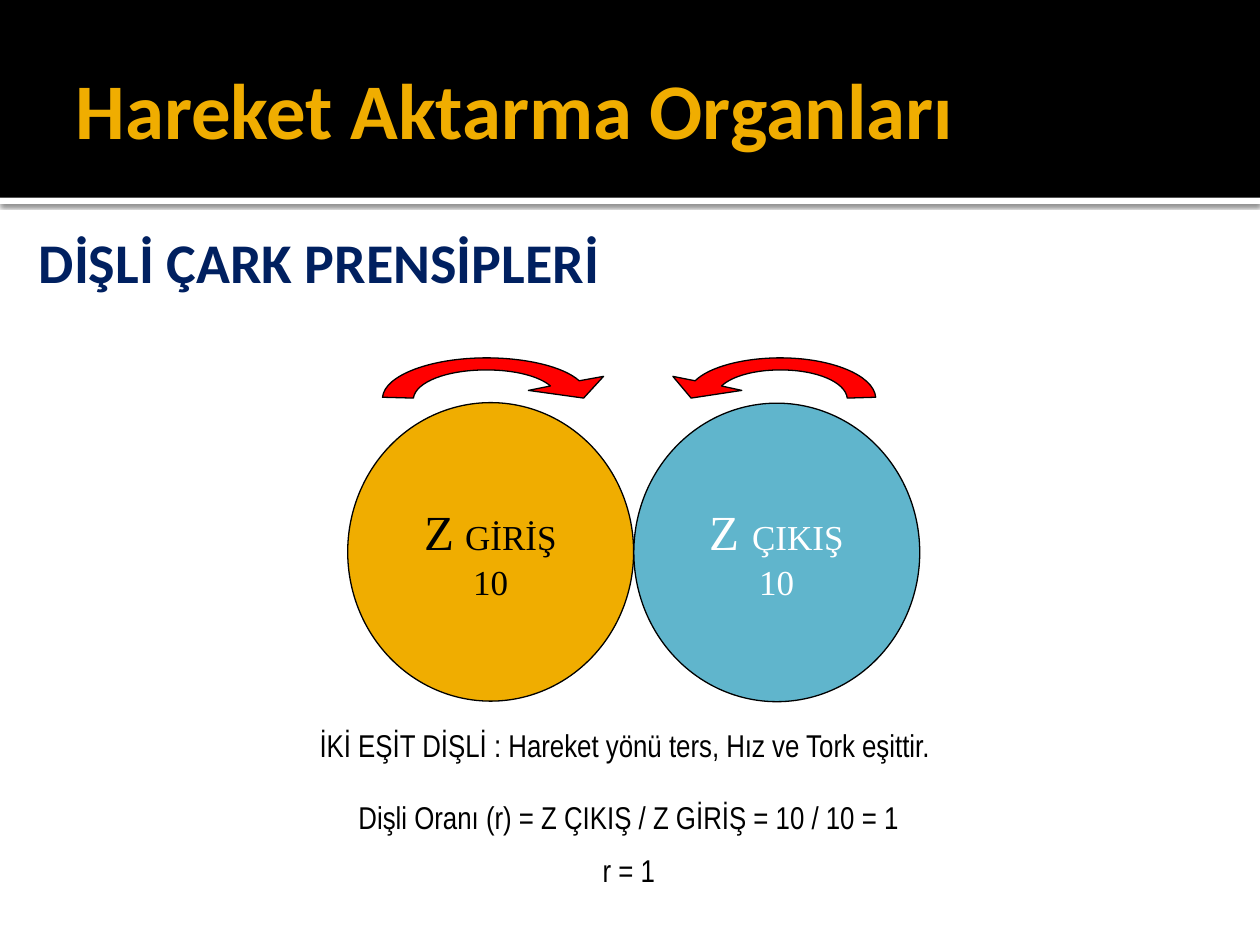
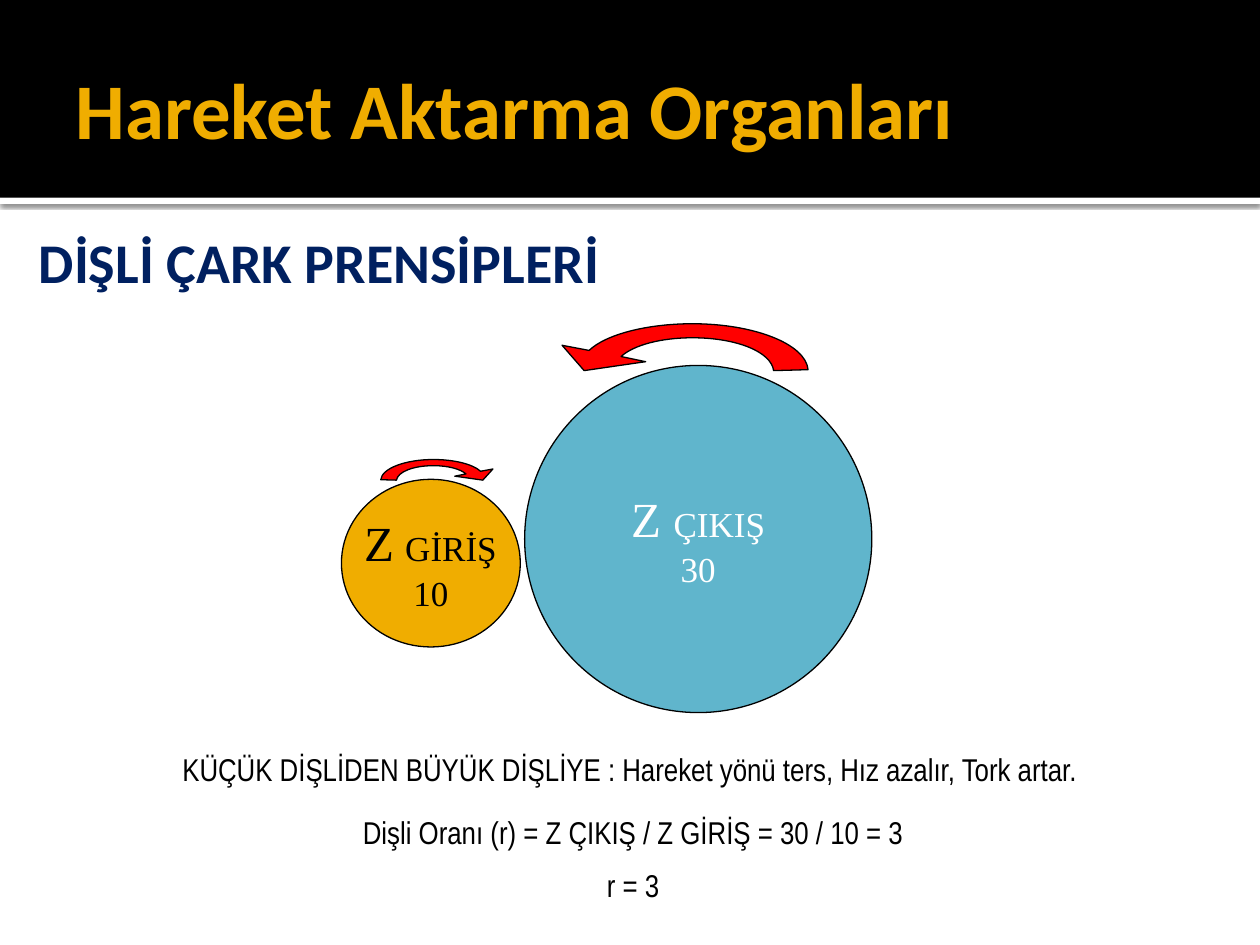
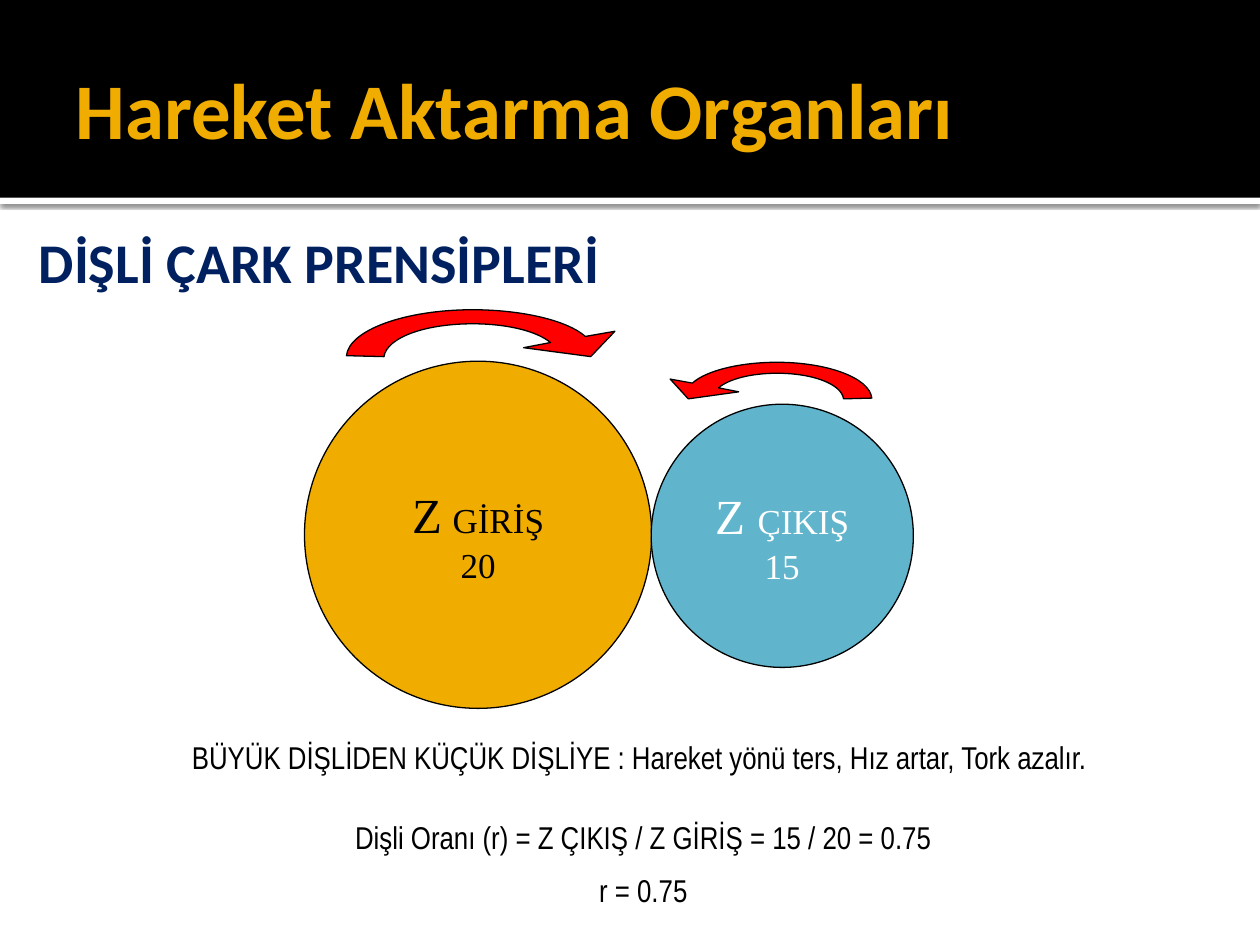
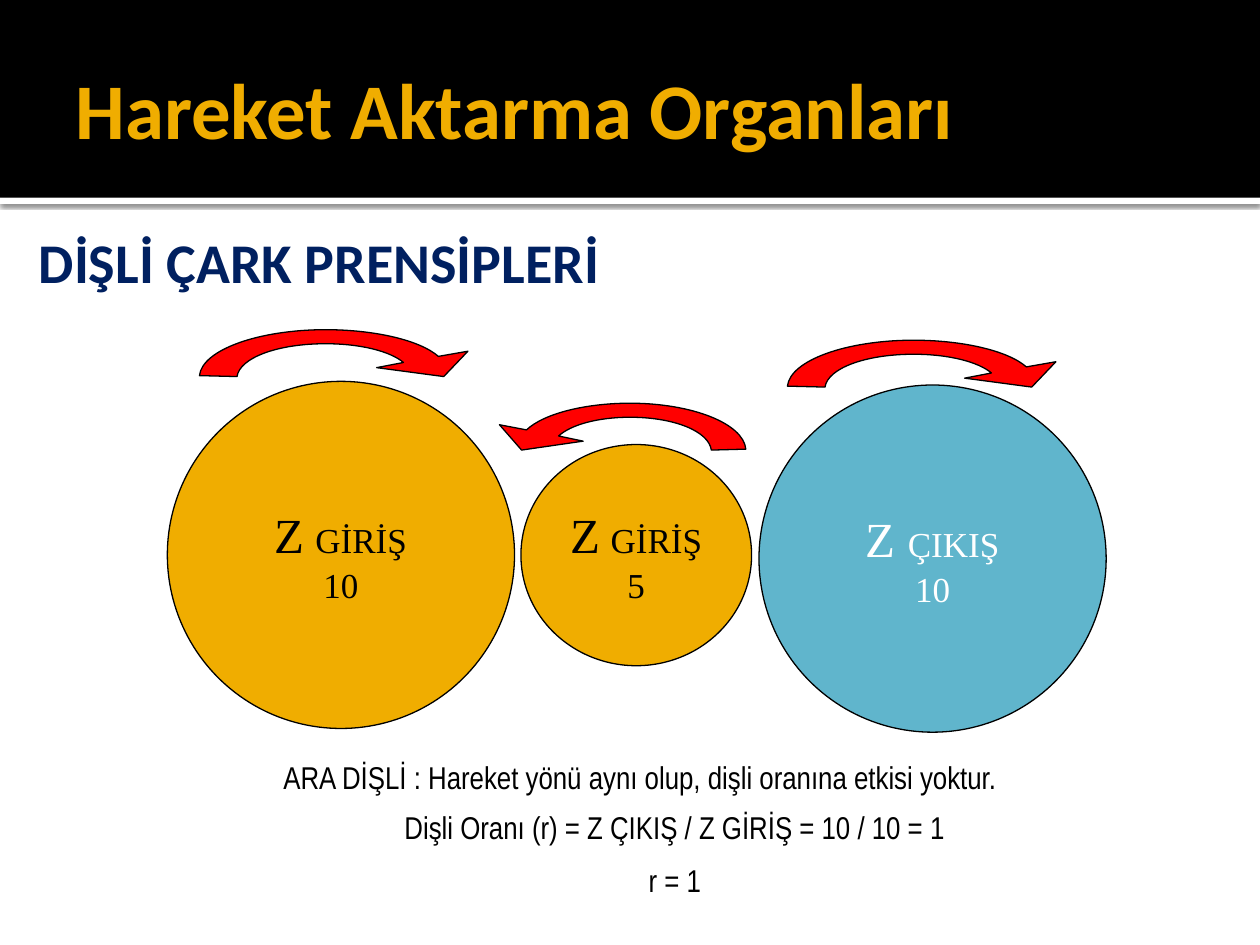
"""Build four slides on gear ratios with labelled gears and turning arrows."""
from lxml import etree
from pptx import Presentation
from pptx.dml.color import RGBColor
from pptx.enum.shapes import MSO_SHAPE
from pptx.enum.text import MSO_ANCHOR, MSO_AUTO_SIZE, PP_ALIGN
from pptx.util import Pt

RECT, OVAL = MSO_SHAPE.RECTANGLE, MSO_SHAPE.OVAL
TOP, MID = MSO_ANCHOR.TOP, MSO_ANCHOR.MIDDLE
LEFT, MIDST = PP_ALIGN.LEFT, PP_ALIGN.CENTER
FIXED = MSO_AUTO_SIZE.NONE

HUES = {
    "black": "000000", "white": "FFFFFF", "gold": "F0AD00",
    "blue": "60B5CC", "navy": "002060", "red": "FF0000",
}
HEAD, BODY, GEAR = "Calibri", "Arial Narrow", "Times New Roman"
TITLE = "Hareket Aktarma Organları"
TOPIC = "DİŞLİ ÇARK PRENSİPLERİ"

ROLES = {
    "in": {"fill": "gold", "ink": "black", "runs": [("Z", 28), (" ", 24), ("GİRİŞ", 20)]},
    "out": {"fill": "blue", "ink": "white", "runs": [("Z ", 28), ("ÇIKIŞ", 20)]},
}

SHADE = (
    '<a:effectLst xmlns:a="http://schemas.openxmlformats.org/drawingml/2006/main">'
    '<a:outerShdw blurRad="31750" dist="10160" dir="5400000" rotWithShape="0">'
    '<a:srgbClr val="000000"><a:alpha val="60000"/></a:srgbClr>'
    '</a:outerShdw></a:effectLst>'
)

START = (0.76, 0.7)
PARTS = [
    [(0.71, 0.46), (0.6, 0.3), (0.47, 0.3)],
    [(0.29, 0.3), (0.15, 0.6), (0.14, 1)],
    [(0, 0.98)],
    [(0.01, 0.43), (0.22, 0), (0.47, 0)],
    [(0.65, 0), (0.82, 0.22), (0.89, 0.57)],
    [(1, 0.46)],
    [(0.91, 1)],
    [(0.66, 0.81)],
    [START],
]

PAGES = [
    {
        "gears": [
            ("in", 10, (198.7, 230.1, 163.4, 170.6), (218.6, 204.5, 126.3, 23)),
            ("out", 10, (362.2, 230.4, 163.4, 170.6), (384.5, 204.5, 115.9, 23)),
        ],
        "note": "İKİ EŞİT DİŞLİ : Hareket yönü ters, Hız ve Tork eşittir.",
        "spot": (105.1, 411.1, 504, 28.8),
        "sum": (114.5, 452.2, 489.6, 61.2),
    },
    {
        "gears": [
            ("in", 10, (195.1, 273.9, 102.2, 95.8), (217.6, 262.6, 64.1, 11.8)),
            ("out", 30, (299.8, 208.8, 198.4, 198.4), (321.2, 185, 140.6, 26.8)),
        ],
        "note": "KÜÇÜK DİŞLİDEN BÜYÜK DİŞLİYE : Hareket yönü ters, Hız azalır, Tork artar.",
        "spot": (54, 424.8, 612, 28.8),
        "sum": (64.8, 460.8, 594, 61.2),
    },
    {
        "gears": [
            ("in", 20, (174, 206.4, 198.4, 198.4), (198, 177, 153.4, 26.8)),
            ("out", 15, (372.1, 231, 149.8, 150.4), (383, 207, 115.2, 20.9)),
        ],
        "note": "BÜYÜK DİŞLİDEN KÜÇÜK DİŞLİYE : Hareket yönü ters, Hız artar, Tork azalır.",
        "spot": (59.5, 418.3, 612, 28.8),
        "sum": (70.6, 463.7, 594, 61.2),
    },
    {
        "gears": [
            ("in", 10, (95.6, 217.9, 198.4, 198.4), (114, 188.4, 153.4, 26.8)),
            ("in", 5, (297.7, 254, 131.8, 126.4), (285.4, 230.4, 140.8, 26.8)),
            ("out", 10, (433.7, 220, 198.4, 198.4), (450, 194.4, 153.4, 26.8)),
        ],
        "note": "ARA DİŞLİ : Hareket yönü aynı olup, dişli oranına etkisi yoktur.",
        "spot": (42.5, 429.8, 646.6, 28.8),
        "sum": (105.1, 457.9, 560.9, 61.2),
    },
]


def tint(name):
    """Return the named colour."""
    return RGBColor.from_string(HUES[name])


def apply(item, form):
    """Set each attribute of the item from a dict."""
    for name, value in form.items():
        setattr(item, name, value)


def place(box):
    """Turn a box in points into lengths."""
    return [Pt(n) for n in box]


def paint(shape, fill, line=None):
    """Give a shape a flat fill and an optional thin line."""
    shape.shadow.inherit = False
    shape.fill.solid()
    shape.fill.fore_color.rgb = tint(fill)
    if line:
        shape.line.color.rgb = tint(line)
        shape.line.width = Pt(0.75)
    else:
        shape.line.fill.background()


def write(shape, lines, font, ink, align, bold=False, gap=0, **frame):
    """Write lines, each a list of (text, size) runs, into a shape."""
    text = shape.text_frame
    apply(text, {"auto_size": FIXED, "word_wrap": True, **frame})
    for i, runs in enumerate(lines):
        para = text.add_paragraph() if i else text.paragraphs[0]
        apply(para, {"alignment": align, "space_before": Pt(gap if i else 0)})
        for words, size in runs:
            run = para.add_run()
            run.text = words
            apply(run.font, {"name": font, "size": Pt(size), "bold": bold})
            run.font.color.rgb = tint(ink)


def add_bands(slide):
    """Draw the top band and its shadowed strip, and move them to the layout."""
    strip = slide.shapes.add_shape(RECT, *place((0, 113, 720, 3.6)))
    band = slide.shapes.add_shape(RECT, *place((0, 0, 720, 113)))
    paint(strip, "white")
    paint(band, "black")
    props = strip.element.spPr
    props.remove(props.find("{*}effectLst"))
    props.append(etree.fromstring(SHADE))
    tree = slide.slide_layout.shapes.element
    for spot, shape in enumerate((strip, band), 2):
        tree.insert(spot, shape.element)


def add_heads(slide):
    """Fill the title and add the topic below it."""
    title = slide.shapes.title
    apply(title, dict(zip(("left", "top", "width", "height"), place((36, 12.2, 648, 98.6)))))
    write(title, [[(TITLE, 45)]], HEAD, "gold", LEFT, True, vertical_anchor=MID,
          margin_left=Pt(7.2), margin_right=Pt(3.6))
    topic = slide.shapes.add_textbox(*place((8.6, 122.8, 700, 67.7)))
    write(topic, [[(TOPIC, 32)]], HEAD, "navy", LEFT, True, vertical_anchor=TOP,
          margin_left=Pt(13.6), margin_top=Pt(7.2))


def add_gear(slide, role, teeth, box):
    """Draw a gear with its role and tooth count."""
    look = ROLES[role]
    gear = slide.shapes.add_shape(OVAL, *place(box))
    paint(gear, look["fill"], "black")
    lines = [look["runs"], [(str(teeth), 20)]]
    write(gear, lines, GEAR, look["ink"], MIDST, vertical_anchor=MID, word_wrap=False)


def bend(shape):
    """Merge each three-point part of the outline into one curve."""
    legs = iter(list(shape.element.iter("{*}lnTo")))
    for part in PARTS:
        leg = next(legs)
        if len(part) == 3:
            leg.tag = leg.tag.replace("lnTo", "cubicBezTo")
            for _ in part[1:]:
                rest = next(legs)
                leg.append(rest[0])
                rest.getparent().remove(rest)


def add_arrow(slide, box, flip):
    """Draw a bent arrow over a gear, pointing left when flipped."""
    x, y, wide, high = box
    dots = [(Pt(x + wide * (1 - u if flip else u)), Pt(y + high * v))
            for u, v in [START, *sum(PARTS, [])]]
    pen = slide.shapes.build_freeform(*dots[0])
    pen.add_line_segments(dots[1:], close=True)
    arrow = pen.convert_to_shape()
    bend(arrow)
    paint(arrow, "red", "black")


def add_note(slide, box, *lines):
    """Add centred lines under the gears."""
    note = slide.shapes.add_textbox(*place(box))
    write(note, [[(line, 18)] for line in lines], BODY, "black", MIDST, gap=9)


def add_page(slide, page):
    """Fill one slide with its gears, arrows and notes."""
    add_heads(slide)
    gears = page["gears"]
    for role, teeth, box, _ in gears:
        add_gear(slide, role, teeth, box)
    for i, gear in enumerate(gears):
        add_arrow(slide, gear[3], i % 2 == 1)
    first, last = gears[0][1], gears[-1][1]
    ratio = f"{last / first:g}"
    add_note(slide, page["spot"], page["note"])
    add_note(slide, page["sum"],
             f"Dişli Oranı (r) = Z ÇIKIŞ / Z GİRİŞ = {last} / {first} = {ratio}",
             f"r = {ratio}")


def main():
    """Build and save the deck."""
    deck = Presentation()
    apply(deck, {"slide_width": Pt(720), "slide_height": Pt(540)})
    layout = deck.slide_layouts[5]
    for i, page in enumerate(PAGES):
        slide = deck.slides.add_slide(layout)
        if i == 0:
            add_bands(slide)
        add_page(slide, page)
    deck.save("out.pptx")


if __name__ == "__main__":
    main()
